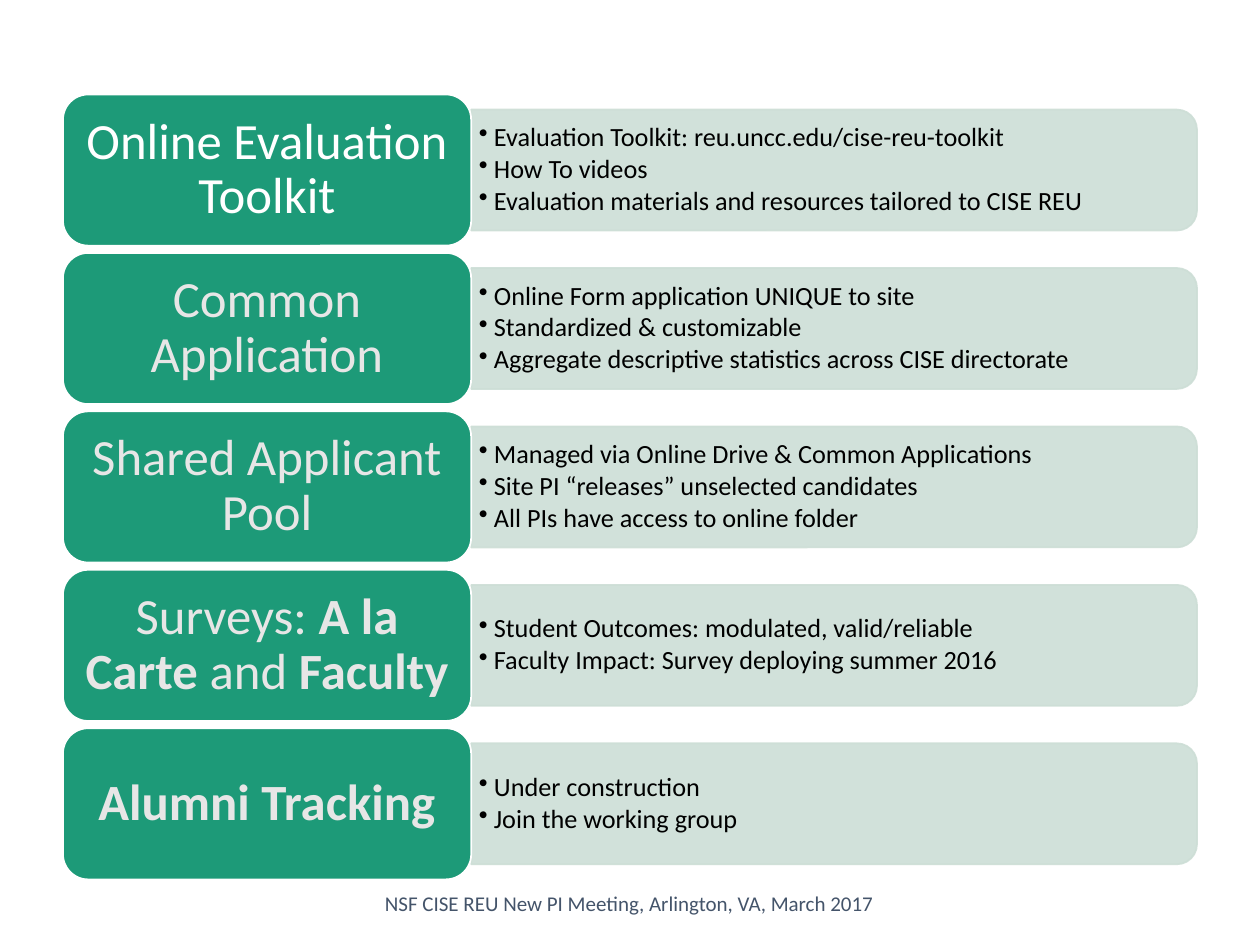
"""Build a slide of five program resources, each a title block beside a bulleted panel."""
from dataclasses import dataclass

from lxml import etree
from pptx import Presentation
from pptx.dml.color import RGBColor
from pptx.enum.shapes import MSO_SHAPE
from pptx.enum.text import MSO_ANCHOR, PP_ALIGN
from pptx.oxml.ns import qn
from pptx.util import Inches, Pt

ROUND_RECT = MSO_SHAPE.ROUNDED_RECTANGLE
ROUND_TOP = MSO_SHAPE.ROUND_2_SAME_RECTANGLE
MIDDLE = MSO_ANCHOR.MIDDLE
CENTER = PP_ALIGN.CENTER


@dataclass(frozen=True)
class Theme:
    font: str = "Calibri"
    title_size: int = 29
    bullet_size: int = 15
    footer_size: int = 12
    block: str = "1D9A78"
    panel: str = "CDDED6"
    panel_alpha: int = 90
    white: str = "FFFFFF"
    gray: str = "E7E6E6"
    black: str = "000000"
    slate: str = "44546A"


@dataclass(frozen=True)
class Resource:
    title: tuple[tuple[str, bool], ...]
    bullets: tuple[str, ...]
    title_color: str


THEME = Theme()
LEFT, TOP, PITCH = 0.5, 0.75, 1.2575
BLOCK_W, BLOCK_H = 3.24, 1.2
PANEL_W, PANEL_H = 5.76, 0.96
BULLET_W, BULLET_H = 5.71, 0.86
FOOTER = "NSF CISE REU New PI Meeting, Arlington, VA, March 2017"
RESOURCES = (
    Resource((("Online Evaluation Toolkit", False),),
             ("Evaluation Toolkit: reu.uncc.edu/cise-reu-toolkit",
              "How To videos",
              "Evaluation materials and resources tailored to CISE REU"),
             THEME.white),
    Resource((("Common Application", False),),
             ("Online Form application UNIQUE to site",
              "Standardized & customizable",
              "Aggregate descriptive statistics across CISE directorate"),
             THEME.gray),
    Resource((("Shared Applicant Pool", False),),
             ("Managed via Online Drive & Common Applications",
              "Site PI “releases” unselected candidates",
              "All PIs have access to online folder"),
             THEME.gray),
    Resource((("Surveys: ", False), ("A la Carte ", True),
              ("and ", False), ("Faculty", True)),
             ("Student Outcomes: modulated, valid/reliable",
              "Faculty Impact: Survey deploying summer 2016"),
             THEME.gray),
    Resource((("Alumni Tracking", True),),
             ("Under construction", "Join the working group"),
             THEME.gray),
)


def format_run(r, size: int, color: str, bold: bool = False) -> None:
    """Apply the theme font with a size, colour and weight."""
    r.font.name = THEME.font
    r.font.size = Pt(size)
    r.font.bold = bold
    r.font.color.rgb = RGBColor.from_string(color)


def set_frame(tf, inset_x: float, inset_y: float) -> None:
    """Wrap and vertically centre a text frame inside its insets."""
    tf.word_wrap = True
    tf.vertical_anchor = MIDDLE
    tf.margin_left = tf.margin_right = Inches(inset_x)
    tf.margin_top = tf.margin_bottom = Inches(inset_y)


def add_bar(s, kind, x: float, y: float, w: float, h: float, fill: str, line: str):
    """Add a flat shape with a one-point outline."""
    sp = s.shapes.add_shape(kind, Inches(x), Inches(y), Inches(w), Inches(h))
    sp.shadow.inherit = False
    sp.fill.solid()
    sp.fill.fore_color.rgb = RGBColor.from_string(fill)
    sp.line.color.rgb = RGBColor.from_string(line)
    sp.line.width = Pt(1)
    return sp


def add_panel(s, middle: float) -> None:
    """Add the translucent panel, turned so its round corners face right."""
    x = LEFT + BLOCK_W + (PANEL_W - PANEL_H) / 2
    sp = add_bar(s, ROUND_TOP, x, middle - PANEL_W / 2, PANEL_H, PANEL_W,
                 THEME.panel, THEME.panel)
    sp.rotation = 90
    for color in sp.element.spPr.iter(qn("a:srgbClr")):
        etree.SubElement(color, qn("a:alpha"), val=str(THEME.panel_alpha * 1000))


def add_bullets(s, bullets: tuple[str, ...], middle: float) -> None:
    """Add the bulleted list over a panel."""
    box = s.shapes.add_textbox(Inches(LEFT + BLOCK_W), Inches(middle - BULLET_H / 2),
                               Inches(BULLET_W), Inches(BULLET_H))
    tf = box.text_frame
    set_frame(tf, 0.06, 0.03)
    tf.text = "\n".join(bullets)
    for p in tf.paragraphs:
        p.level = 1
        p.line_spacing = 0.9
        p.space_after = Pt(2)
        pPr = p._p.get_or_add_pPr()
        pPr.set("marL", str(Inches(0.12)))
        pPr.set("indent", str(Inches(-0.12)))
        etree.SubElement(pPr, qn("a:buChar"), char="•")
        format_run(p.runs[0], THEME.bullet_size, THEME.black)


def add_title_block(s, resource: Resource, y: float) -> None:
    """Add the coloured block that names a resource."""
    sp = add_bar(s, ROUND_RECT, LEFT, y, BLOCK_W, BLOCK_H, THEME.block, THEME.white)
    set_frame(sp.text_frame, 0.12, 0.06)
    p = sp.text_frame.paragraphs[0]
    p.alignment = CENTER
    p.line_spacing = 0.9
    for text, bold in resource.title:
        r = p.add_run()
        r.text = text
        format_run(r, THEME.title_size, resource.title_color, bold)


def add_footer(s) -> None:
    """Add the centred meeting line at the bottom."""
    box = s.shapes.add_textbox(Inches(2.08), Inches(6.98), Inches(5.83), Inches(0.38))
    tf = box.text_frame
    set_frame(tf, 0.1, 0.05)
    tf.text = FOOTER
    p = tf.paragraphs[0]
    p.alignment = CENTER
    format_run(p.runs[0], THEME.footer_size, THEME.slate)


def main() -> None:
    """Build and save the slide."""
    prs = Presentation()
    prs.slide_width, prs.slide_height = Inches(10), Inches(7.5)
    s = prs.slides.add_slide(prs.slide_layouts[6])
    for i, resource in enumerate(RESOURCES):
        y = TOP + i * PITCH
        middle = y + BLOCK_H / 2
        add_panel(s, middle)
        add_bullets(s, resource.bullets, middle)
        add_title_block(s, resource, y)
    add_footer(s)
    prs.save("out.pptx")


if __name__ == "__main__":
    main()
